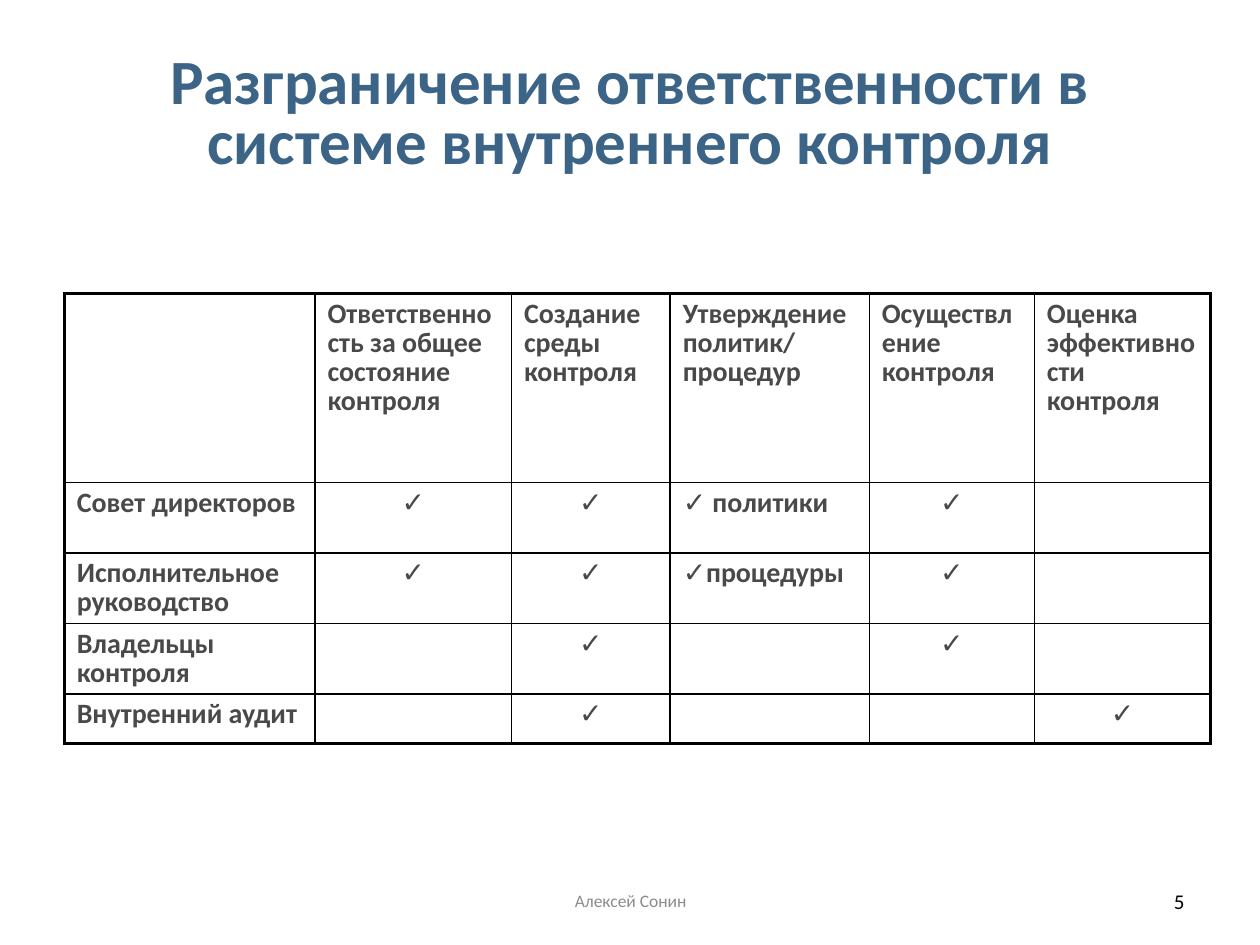
from lxml.etree import SubElement
from pptx import Presentation
from pptx.dml.color import RGBColor
from pptx.enum.text import MSO_ANCHOR as Anchor, PP_ALIGN as Align
from pptx.oxml.ns import qn
from pptx.util import Inches, Pt

COLORS = {"title": "3C6487", "body": "494949", "border": "000000",
          "number": "000000", "footer": "8C8C8C"}
FONT = "Calibri"
CHECK = "✓"
COLUMN_WIDTHS = [1.99, 1.56, 1.26, 1.58, 1.31, 1.4]
ROW_HEIGHTS = [1.5, 0.56, 0.56, 0.56, 0.39]
ROWS = [
    ["", "Ответственность за общее состояние контроля", "Создание среды контроля",
     "Утверждение политик/\nпроцедур", "Осуществление контроля",
     "Оценка эффективности контроля"],
    ["Совет директоров", CHECK, CHECK, "✓ политики", CHECK, ""],
    ["Исполнительное руководство", CHECK, CHECK, "✓процедуры", CHECK, ""],
    ["Владельцы контроля", "", CHECK, "", CHECK, ""],
    ["Внутренний аудит", "", CHECK, "", "", CHECK],
]


def write_text(tf, text, size, color, bold=False, align=Align.LEFT, spacing=1.0):
    tf.word_wrap = True
    for i, line in enumerate(text.split("\n")):
        p = tf.paragraphs[0] if i == 0 else tf.add_paragraph()
        p.alignment = align
        p.line_spacing = spacing
        p.space_before = Pt(0)
        p.font.size = Pt(size)
        if line:
            r = p.add_run()
            r.text = line
            r.font.name = FONT
            r.font.size = Pt(size)
            r.font.bold = bold
            r.font.color.rgb = RGBColor.from_string(COLORS[color])


def add_text(s, box, text, **fmt):
    tf = s.shapes.add_textbox(*map(Inches, box)).text_frame
    tf.vertical_anchor = Anchor.MIDDLE
    write_text(tf, text, **fmt)


def set_borders(cell, widths):
    tcPr = cell._tc.get_or_add_tcPr()
    for side, width in widths.items():
        ln = SubElement(tcPr, qn(f"a:ln{side}"), w=str(Pt(width)))
        fill = SubElement(ln, qn("a:solidFill"))
        SubElement(fill, qn("a:srgbClr"), val=COLORS["border"])


def add_matrix(s, box):
    table = s.shapes.add_table(len(ROWS), len(COLUMN_WIDTHS), *map(Inches, box)).table
    table.first_row = table.horz_banding = False
    for column, width in zip(table.columns, COLUMN_WIDTHS):
        column.width = Inches(width)
    for row, height in zip(table.rows, ROW_HEIGHTS):
        row.height = Inches(height)
    last_row, last_col = len(ROWS) - 1, len(COLUMN_WIDTHS) - 1
    for i, texts in enumerate(ROWS):
        for j, text in enumerate(texts):
            cell = table.cell(i, j)
            edges = {"L": j == 0, "R": j == last_col, "T": i == 0, "B": i == last_row}
            set_borders(cell, {side: 2.25 if outer else 1 for side, outer in edges.items()})
            cell.fill.background()
            write_text(cell.text_frame, text, size=16, color="body", bold=True,
                       align=Align.CENTER if text == CHECK else Align.LEFT, spacing=0.85)


def add_footer(s, box):
    left, top, width, height = box
    add_text(s, (left + 2.92, top, 3.17, height), "Алексей Сонин",
             size=10, color="footer", align=Align.CENTER)
    add_text(s, (left + width - 2.33, top, 2.33, height), "5",
             size=12, color="number", align=Align.RIGHT)


def main():
    prs = Presentation()
    prs.slide_width, prs.slide_height = Inches(10), Inches(7.5)
    s = prs.slides.add_slide(prs.slide_layouts[6])
    add_text(s, (0.5, 0.3, 9, 1.25),
             "Разграничение ответственности в системе внутреннего контроля",
             size=36, color="title", bold=True, align=Align.CENTER, spacing=0.8)
    add_matrix(s, (0.51, 2.33, sum(COLUMN_WIDTHS), sum(ROW_HEIGHTS)))
    add_footer(s, (0.5, 6.95, 9, 0.4))
    prs.save("out.pptx")


if __name__ == "__main__":
    main()
